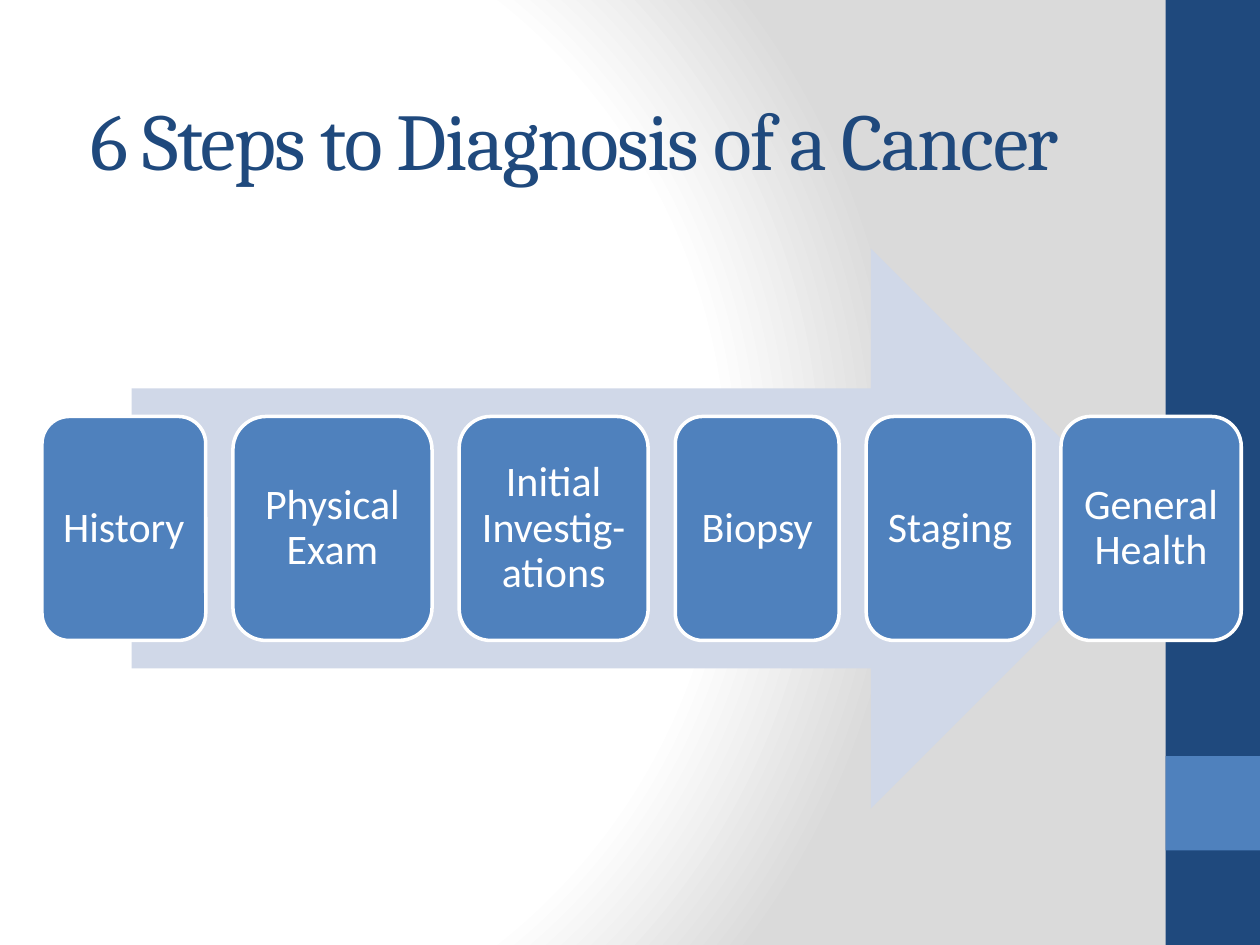
"""Builds the slide on the six steps to diagnosis of a cancer."""
from dataclasses import dataclass

from pptx import Presentation
from pptx.dml.color import RGBColor
from pptx.enum.shapes import MSO_SHAPE as SHAPE
from pptx.enum.text import MSO_ANCHOR as ANCHOR, PP_ALIGN as ALIGN
from pptx.oxml import parse_xml
from pptx.oxml.ns import nsdecls
from pptx.util import Pt


@dataclass(frozen=True)
class Theme:
    navy: str = "1F497D"
    blue: str = "4F81BD"
    pale: str = "D0D8E8"
    white: str = "FFFFFF"
    grey: str = "DADADA"
    title_font: str = "Cambria"
    body_font: str = "Calibri"
    title_size: int = 46
    body_size: int = 24


class Deck:
    def __init__(self, prs, theme):
        self.theme = theme
        self.slide = prs.slides.add_slide(prs.slide_layouts[6])

    def background(self, stops):
        fill = self.slide.background.fill
        fill.gradient()
        grad = self.slide.element.xpath(".//p:bgPr/a:gradFill")[0]
        gs = "".join(
            f'<a:gs pos="{pos * 1000}"><a:srgbClr val="{color}"/></a:gs>'
            for pos, color in stops)
        radial = parse_xml(
            f'<a:gradFill {nsdecls("a")} rotWithShape="1"><a:gsLst>{gs}</a:gsLst>'
            '<a:path path="circle"><a:fillToRect l="20000" t="50000" '
            'r="100000" b="50000"/></a:path></a:gradFill>')
        grad.getparent().replace(grad, radial)

    def shape(self, kind, x, y, w, h, fill):
        sp = self.slide.shapes.add_shape(kind, Pt(x), Pt(y), Pt(w), Pt(h))
        sp.shadow.inherit = False
        sp.fill.solid()
        sp.fill.fore_color.rgb = RGBColor.from_string(fill)
        sp.line.fill.background()
        return sp

    def set_text(self, tf, text, font, size, color, align):
        tf.word_wrap = True
        tf.vertical_anchor = ANCHOR.MIDDLE
        p = tf.paragraphs[0]
        p.text = text
        p.alignment = align
        p.font.name = font
        p.font.size = Pt(size)
        p.font.color.rgb = RGBColor.from_string(color)
        return p

    def title(self, text, x, y, w, h):
        t = self.theme
        tf = self.slide.shapes.add_textbox(Pt(x), Pt(y), Pt(w), Pt(h)).text_frame
        p = self.set_text(tf, text, t.title_font, t.title_size, t.navy, ALIGN.LEFT)
        p.runs[0]._r.get_or_add_rPr().set("spc", "-100")

    def step(self, text, x, y, w, h):
        t = self.theme
        sp = self.shape(SHAPE.ROUNDED_RECTANGLE, x, y, w, h, t.blue)
        sp.line.color.rgb = RGBColor.from_string(t.white)
        sp.line.width = Pt(2)
        tf = sp.text_frame
        tf.margin_left = tf.margin_right = Pt(7.2)
        tf.margin_top = tf.margin_bottom = Pt(7.2)
        p = self.set_text(tf, text, t.body_font, t.body_size, t.white, ALIGN.CENTER)
        p.line_spacing = 0.9


def main():
    prs = Presentation()
    prs.slide_width, prs.slide_height = Pt(720), Pt(540)
    theme = Theme()
    deck = Deck(prs, theme)

    deck.background([(0, theme.white), (75, theme.white), (100, theme.grey)])
    deck.shape(SHAPE.RECTANGLE, 666, 0, 54, 540, theme.navy)
    deck.shape(SHAPE.RECTANGLE, 666, 432, 54, 54, theme.blue)
    deck.title("6 Steps to Diagnosis of a Cancer", 44.64, 21.6, 620, 114.5)
    deck.shape(SHAPE.RIGHT_ARROW, 75.2, 142, 582.5, 320, theme.pale)

    steps = [("History", 93.6), ("Physical Exam", 113.8),
             ("Initial Investig-ations", 108), ("Biopsy", 93.6),
             ("Staging", 95.8), ("General Health", 103)]
    x, gap = 24, 15.5
    for text, width in steps:
        deck.step(text, x, 238, width, 128)
        x += width + gap

    prs.save("out.pptx")


if __name__ == "__main__":
    main()
